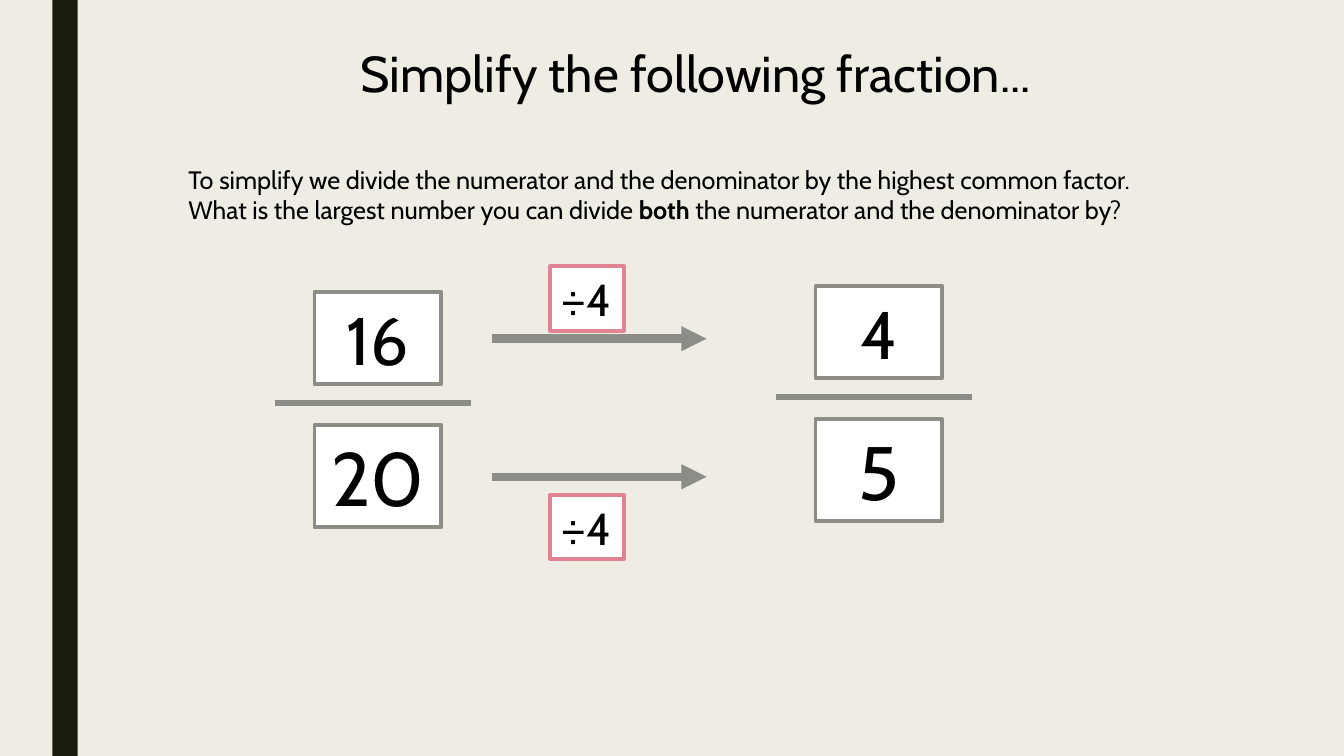
from dataclasses import dataclass

from lxml import etree
from pptx import Presentation
from pptx import util as u
from pptx.dml.color import RGBColor
from pptx.enum import shapes, text
from pptx.oxml.ns import qn

# Content: text is a list of paragraphs, each a list of (words, bold) runs
TITLE = [[("Simplify the following fraction... ", False)]]
EXPLANATION = [
    [("To simplify we divide the numerator and the denominator by the highest common factor.", False)],
    [("What is the largest number you can divide ", False), ("both", True),
     (" the numerator and the denominator by?", False)],
]
# Numerator, denominator, left and top of the numerator box
FRACTIONS = [("16", "20", 224.64, 208.8), ("4", "5", 582.48, 204.48)]
# Label, top of its box, height of its arrow
DIVISIONS = [("÷4", 190.08, 241.92), ("÷4", 353.52, 340.56)]


@dataclass(frozen=True)
class Theme:
    font: str = "Cabin"
    background: str = "EFEDE3"
    bar: str = "191B0E"
    ink: str = "000000"
    paper: str = "FFFFFF"
    grey: str = "8C8D86"
    pink: str = "E28394"
    title: float = 36
    body: float = 18
    numerator: float = 48
    denominator: float = 54
    division: float = 32
    outline: float = 2.75
    fraction_line: float = 4.5
    arrow: float = 6


THEME = Theme()
CENTER, LEFT = text.PP_ALIGN.CENTER, text.PP_ALIGN.LEFT


def color(value):
    return RGBColor.from_string(value)


def points(*values):
    return [u.Pt(value) for value in values]


def write(shape, paragraphs, size, alignment, wrap=True):
    frame = shape.text_frame
    frame.word_wrap = wrap
    frame.auto_size = text.MSO_AUTO_SIZE.NONE
    frame.vertical_anchor = text.MSO_ANCHOR.MIDDLE
    for index, runs in enumerate(paragraphs):
        paragraph = frame.paragraphs[0] if index == 0 else frame.add_paragraph()
        paragraph.alignment = alignment
        for words, bold in runs:
            run = paragraph.add_run()
            run.text = words
            run.font.name = THEME.font
            run.font.size = u.Pt(size)
            run.font.bold = bold
            run.font.color.rgb = color(THEME.ink)


def add_box(slide, box, fill, outline=None):
    shape = slide.shapes.add_shape(shapes.MSO_SHAPE.RECTANGLE, *points(*box))
    shape.shadow.inherit = False
    shape.fill.solid()
    shape.fill.fore_color.rgb = color(fill)
    if outline:
        shape.line.color.rgb = color(outline)
        shape.line.width = u.Pt(THEME.outline)
    else:
        shape.line.fill.background()
    return shape


def add_rule(slide, left, right, y, width, arrow=False):
    rule = slide.shapes.add_connector(
        shapes.MSO_CONNECTOR.STRAIGHT, *points(left, y, right, y))
    rule.line.color.rgb = color(THEME.grey)
    rule.line.width = u.Pt(width)
    properties = rule.line._get_or_add_ln()
    if arrow:
        etree.SubElement(properties, qn("a:tailEnd"), type="triangle")
    etree.SubElement(properties.getparent(), qn("a:effectLst"))


def add_fraction(slide, numerator, denominator, left, top):
    parts = [(numerator, 0, 65.52, THEME.numerator),
             (denominator, 95.04, 72.72, THEME.denominator)]
    for number, offset, height, size in parts:
        box = add_box(slide, (left, top + offset, 90.72, height), THEME.paper, THEME.grey)
        write(box, [[(number, False)]], size, CENTER)
    line_left = left - 28.5
    add_rule(slide, line_left, line_left + 140, top + 79.2, THEME.fraction_line)


def main():
    presentation = Presentation()
    presentation.slide_width, presentation.slide_height = points(960, 540)
    slide = presentation.slides.add_slide(presentation.slide_layouts[5])
    slide.background.fill.solid()
    slide.background.fill.fore_color.rgb = color(THEME.background)

    # Side bar
    add_box(slide, (37.44, 0, 18, 540), THEME.bar)

    # Title
    title = slide.shapes.title
    title.left, title.top, title.width, title.height = points(127.44, 25.92, 747.36, 51.12)
    write(title, TITLE, THEME.title, CENTER)

    # Explanation
    explanation = slide.shapes.add_textbox(*points(127.44, 113.04, 796.32, 51.12))
    write(explanation, EXPLANATION, THEME.body, LEFT)

    # Fractions
    for fraction in FRACTIONS:
        add_fraction(slide, *fraction)

    # Division arrows and labels
    for label, top, arrow_y in DIVISIONS:
        add_rule(slide, 351.36, 504.72, arrow_y, THEME.arrow, arrow=True)
        box = add_box(slide, (393.12, top, 52.56, 46.08), THEME.paper, THEME.pink)
        write(box, [[(label, False)]], THEME.division, LEFT, wrap=False)

    presentation.save("out.pptx")


if __name__ == "__main__":
    main()
